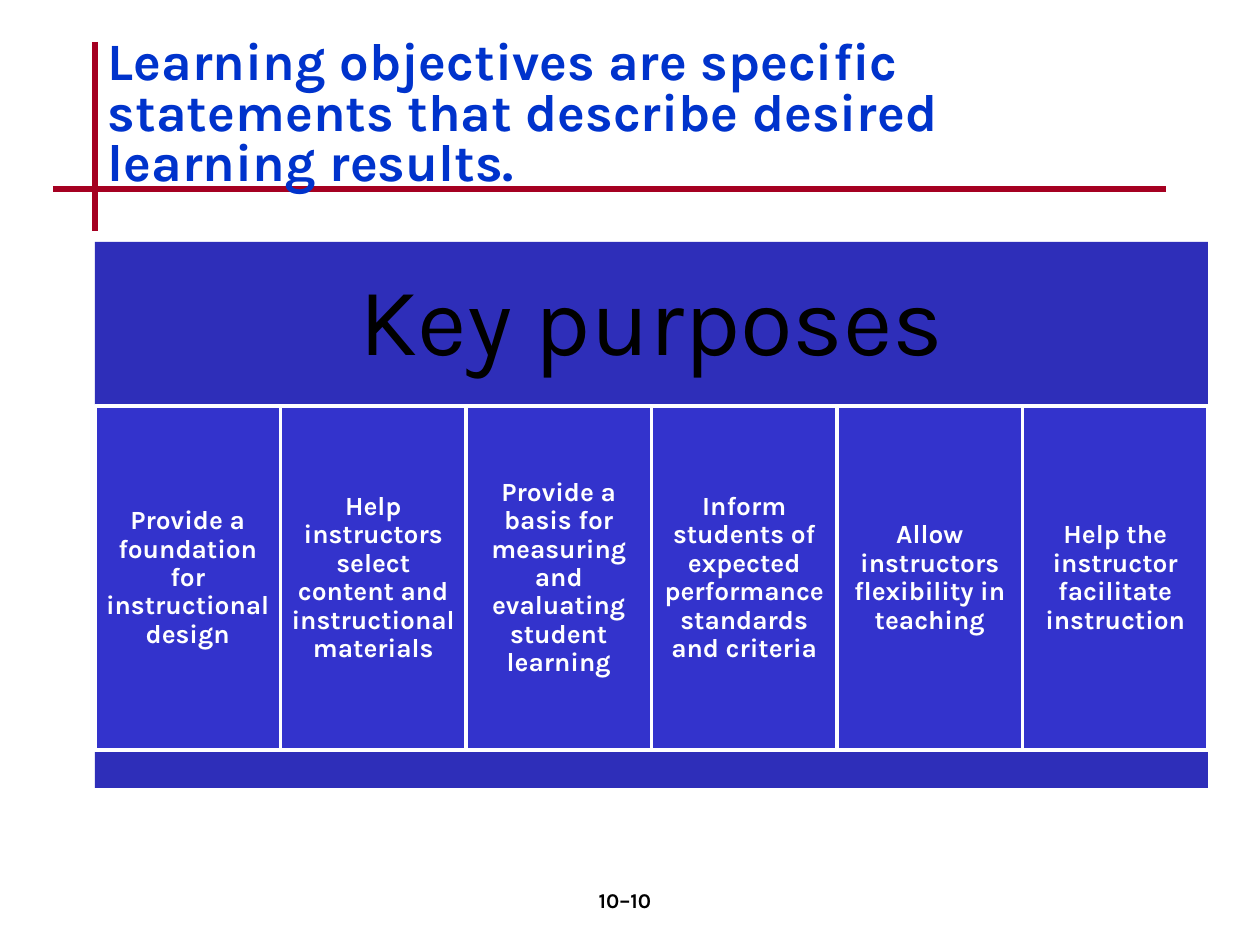
from pptx import Presentation
from pptx.util import Emu, Pt
from pptx.dml.color import RGBColor
from pptx.enum.shapes import MSO_CONNECTOR, MSO_SHAPE
from pptx.enum.text import MSO_ANCHOR, PP_ALIGN
from pptx.oxml.ns import qn
from lxml import etree

LINE = MSO_CONNECTOR.STRAIGHT
RECT = MSO_SHAPE.RECTANGLE
TOP, MID = MSO_ANCHOR.TOP, MSO_ANCHOR.MIDDLE
LEFT, MIDDLE = PP_ALIGN.LEFT, PP_ALIGN.CENTER

THEME = {
    "font": "Karla",
    "rule": "A50021", "band": "2E2EB9", "cell": "3333CC",
    "title": "0033CC", "white": "FFFFFF", "black": "000000",
    "title_pt": 30, "head_pt": 55, "cell_pt": 15, "page_pt": 12,
}


def px(*nums):
    return [Emu(round(n * 914400 / 126)) for n in nums]


def write(shape, text, size, color, bold=True, align=MIDDLE,
          anchor=MID, space=1.0, inset=(13, 6)):
    frame = shape.text_frame
    frame.word_wrap = True
    frame.vertical_anchor = anchor
    frame.margin_left = frame.margin_right = px(inset[0])[0]
    frame.margin_top = frame.margin_bottom = px(inset[1])[0]
    para = frame.paragraphs[0]
    para.alignment = align
    para.line_spacing = space
    run = para.add_run()
    run.text = text
    run.font.name = THEME["font"]
    run.font.size = Pt(THEME[size])
    run.font.bold = bold
    run.font.color.rgb = RGBColor.from_string(THEME[color])


deck = Presentation()
deck.slide_width, deck.slide_height = px(1260, 945)
slide = deck.slides.add_slide(deck.slide_layouts[6])
shapes = slide.shapes

# Crossed rules behind the title
for ends in [(95, 42, 95, 231), (53, 189, 1166, 189)]:
    rule = shapes.add_connector(LINE, *px(*ends))
    rule.line.color.rgb = RGBColor.from_string(THEME["rule"])
    rule.line.width = Pt(3)
    etree.SubElement(rule._element.spPr, qn("a:effectLst"))

# Bands above and below the purposes
left, wide = 95, 1113
bands = []
for top, high in [(242, 164), (750, 38)]:
    band = shapes.add_shape(RECT, *px(left, top, wide, high))
    band.shadow.inherit = False
    band.fill.solid()
    band.fill.fore_color.rgb = RGBColor.from_string(THEME["band"])
    band.line.fill.background()
    bands.append(band)
write(bands[0], "Key purposes", "head_pt", "black", bold=False,
      space=0.9, inset=(29, 29))

# One column for each purpose
goals = [
    "Provide a foundation for instructional design",
    "Help instructors select content and instructional materials",
    "Provide a basis for measuring and evaluating student learning",
    "Inform students of expected performance standards and criteria",
    "Allow instructors flexibility in teaching",
    "Help the instructor facilitate instruction",
]
step = wide / len(goals)
for i, goal in enumerate(goals):
    cell = shapes.add_shape(RECT, *px(left + i * step, 406, step, 344))
    cell.shadow.inherit = False
    cell.fill.solid()
    cell.fill.fore_color.rgb = RGBColor.from_string(THEME["cell"])
    cell.line.color.rgb = RGBColor.from_string(THEME["white"])
    cell.line.width = Pt(2)
    write(cell, goal, "cell_pt", "white", space=0.9, inset=(8, 8))

# Title
title = shapes.add_textbox(*px(95, 32, 1071, 168))
write(title, "Learning objectives are specific statements that describe "
      "desired learning results.", "title_pt", "title", align=LEFT, space=0.8)

# Page number
page = shapes.add_textbox(*px(494, 882, 262, 63))
write(page, "10–10", "page_pt", "black", anchor=TOP)

deck.save("out.pptx")
